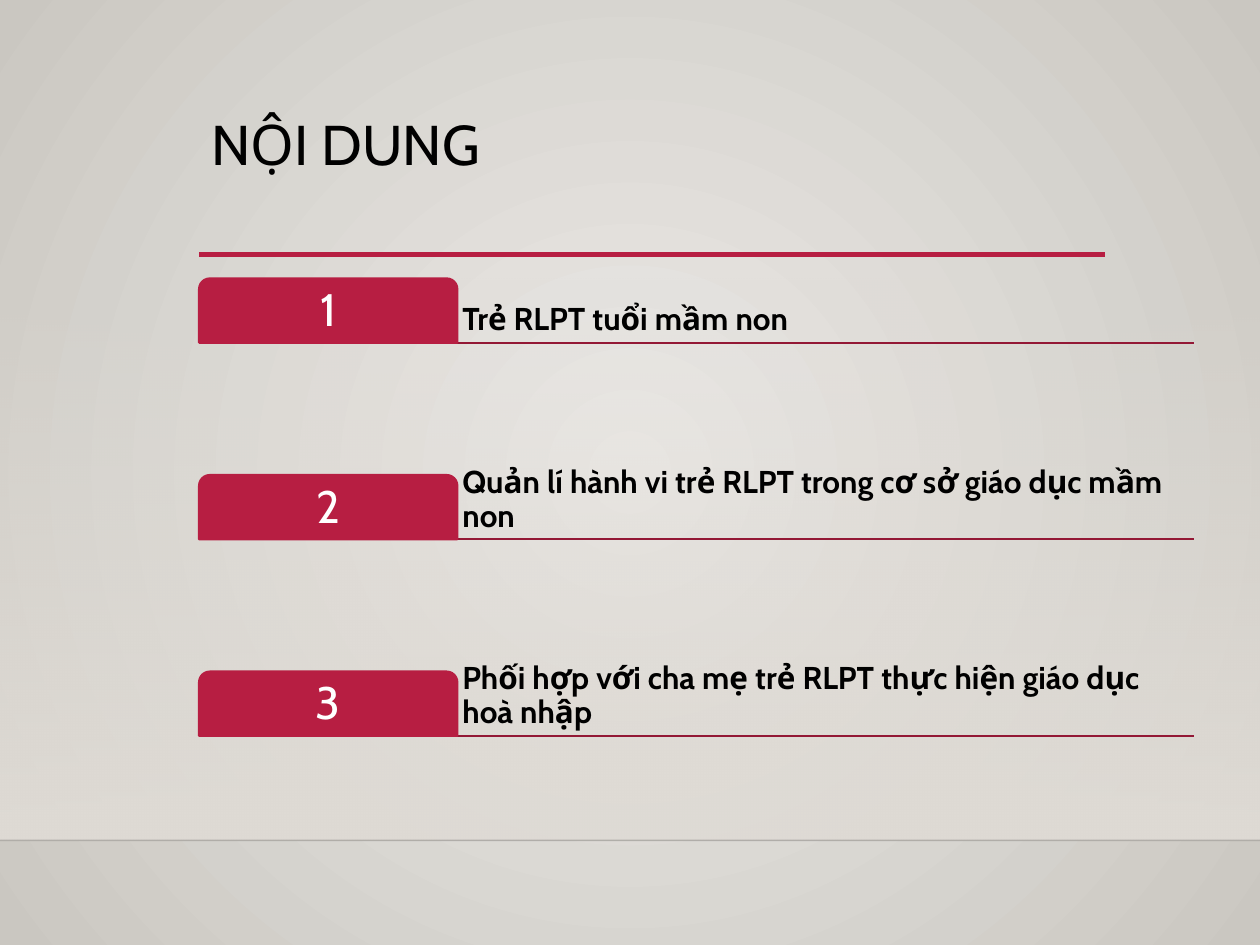
from lxml import etree
from pptx import Presentation
from pptx import util as u
from pptx.dml.color import RGBColor
from pptx.enum import shapes, text
from pptx.oxml import ns, parse_xml

WIDTH, HEIGHT = 10, 7.5
LEFT, TAB_RIGHT, RIGHT = 1.58, 3.63, 9.48
FIRST_ROW, ROW_STEP, ROW_HEIGHT = 2.21, 1.56, 0.51
FLOOR = 6.67

CRIMSON = RGBColor(0xB7, 0x1E, 0x42)
DARK_CRIMSON = RGBColor(0x93, 0x18, 0x35)
BLACK = RGBColor(0, 0, 0)
WHITE = RGBColor(255, 255, 255)
LIGHT = RGBColor(0xEC, 0xEA, 0xE7)
SHADE = RGBColor(0xCA, 0xC7, 0xC1)
SAND = RGBColor(0xDF, 0xDB, 0xD5)

FONT = "Cabin"
TOPICS = [
    "Trẻ RLPT tuổi mầm non",
    "Quản lí hành vi trẻ RLPT trong cơ sở giáo dục mầm non",
    "Phối hợp với cha mẹ trẻ RLPT thực hiện giáo dục hoà nhập",
]


def set_all(target, values):
    for name, value in values.items():
        setattr(target, name, value)


def paint_gradient(owner, stops, direction):
    """Fill a page or shape; stops are (share, colour, opacity)."""
    fill = owner.background.fill if hasattr(owner, "background") else owner.fill
    fill.gradient()
    old = owner.element.xpath(".//a:gradFill")[0] if hasattr(owner, "element") \
        else owner._element.xpath(".//a:gradFill")[0]
    marks = "".join(
        f'<a:gs pos="{share * 1000}"><a:srgbClr val="{colour}">'
        f'<a:alpha val="{opacity * 1000}"/></a:srgbClr></a:gs>'
        for share, colour, opacity in stops)
    new = parse_xml(f'<a:gradFill {ns.nsdecls("a")} rotWithShape="1">'
                    f'<a:gsLst>{marks}</a:gsLst>{direction}</a:gradFill>')
    old.getparent().replace(old, new)


def add_rule(page, left, right, top, colour, weight, opacity=100):
    rule = page.shapes.add_connector(
        shapes.MSO_CONNECTOR.STRAIGHT,
        *map(u.Inches, (left, top, right, top)))
    rule.line.color.rgb = colour
    rule.line.width = u.Pt(weight)
    if opacity < 100:
        tint = rule._element.xpath(".//a:ln//a:srgbClr")[0]
        etree.SubElement(tint, ns.qn("a:alpha"), val=str(opacity * 1000))
    etree.SubElement(rule._element.spPr, ns.qn("a:effectLst"))


def write(box, words, size, colour, anchor, margins, bold=False,
          align=text.PP_ALIGN.LEFT):
    frame = box.text_frame
    set_all(frame, {"word_wrap": True, "vertical_anchor": anchor})
    across, down = map(u.Inches, margins)
    set_all(frame, {"margin_left": across, "margin_right": across,
                    "margin_top": down, "margin_bottom": down})
    para = frame.paragraphs[0]
    set_all(para, {"alignment": align, "line_spacing": 0.9})
    span = para.add_run()
    span.text = words
    set_all(span.font, {"name": FONT, "size": u.Pt(size), "bold": bold})
    span.font.color.rgb = colour


def add_text(page, place, *args, **options):
    write(page.shapes.add_textbox(*map(u.Inches, place)), *args, **options)


def add_tab(page, top, number):
    tab = page.shapes.add_shape(
        shapes.MSO_SHAPE.ROUND_2_SAME_RECTANGLE,
        *map(u.Inches, (LEFT, top, TAB_RIGHT - LEFT, ROW_HEIGHT)))
    tab.shadow.inherit = False
    tab.adjustments[0], tab.adjustments[1] = 0.167, 0
    tab.fill.solid()
    tab.fill.fore_color.rgb = CRIMSON
    tab.line.color.rgb = CRIMSON
    tab.line.width = u.Pt(1.25)
    write(tab, str(number), 26, WHITE, text.MSO_ANCHOR.MIDDLE, (0.05, 0.05),
          align=text.PP_ALIGN.CENTER)


def add_topic(page, index, words):
    top = FIRST_ROW + index * ROW_STEP
    add_rule(page, LEFT, RIGHT, top + ROW_HEIGHT, DARK_CRIMSON, 1.25)
    add_text(page, (TAB_RIGHT, top, RIGHT - TAB_RIGHT, ROW_HEIGHT), words,
             18, BLACK, text.MSO_ANCHOR.BOTTOM, (0.04, 0.04), bold=True)
    add_tab(page, top, index + 1)


def add_backdrop(page):
    paint_gradient(
        page, [(0, LIGHT, 100), (100, SHADE, 100)],
        '<a:path path="circle"><a:fillToRect l="50000" t="50000" '
        'r="50000" b="50000"/></a:path>')
    wall = page.shapes.add_shape(
        shapes.MSO_SHAPE.RECTANGLE,
        *map(u.Inches, (0, 2.2, WIDTH, FLOOR - 2.2)))
    wall.shadow.inherit = False
    wall.line.fill.background()
    paint_gradient(wall, [(0, SAND, 0), (100, SAND, 100)],
                   '<a:lin ang="5400000" scaled="0"/>')
    add_rule(page, 0, WIDTH, FLOOR, BLACK, 1, opacity=20)


def main():
    deck = Presentation()
    set_all(deck, {"slide_width": u.Inches(WIDTH),
                   "slide_height": u.Inches(HEIGHT)})
    page = deck.slides.add_slide(deck.slide_layouts[6])
    add_backdrop(page)

    # Title and its rule
    add_rule(page, LEFT, 8.77, 2.02, CRIMSON, 2.5)
    add_text(page, (LEFT, 0.88, 7.98, 1.15), "NỘI DUNG", 32, BLACK,
             text.MSO_ANCHOR.TOP, (0.1, 0.05))

    # Numbered topics
    for index, words in enumerate(TOPICS):
        add_topic(page, index, words)

    deck.save("out.pptx")


if __name__ == "__main__":
    main()
